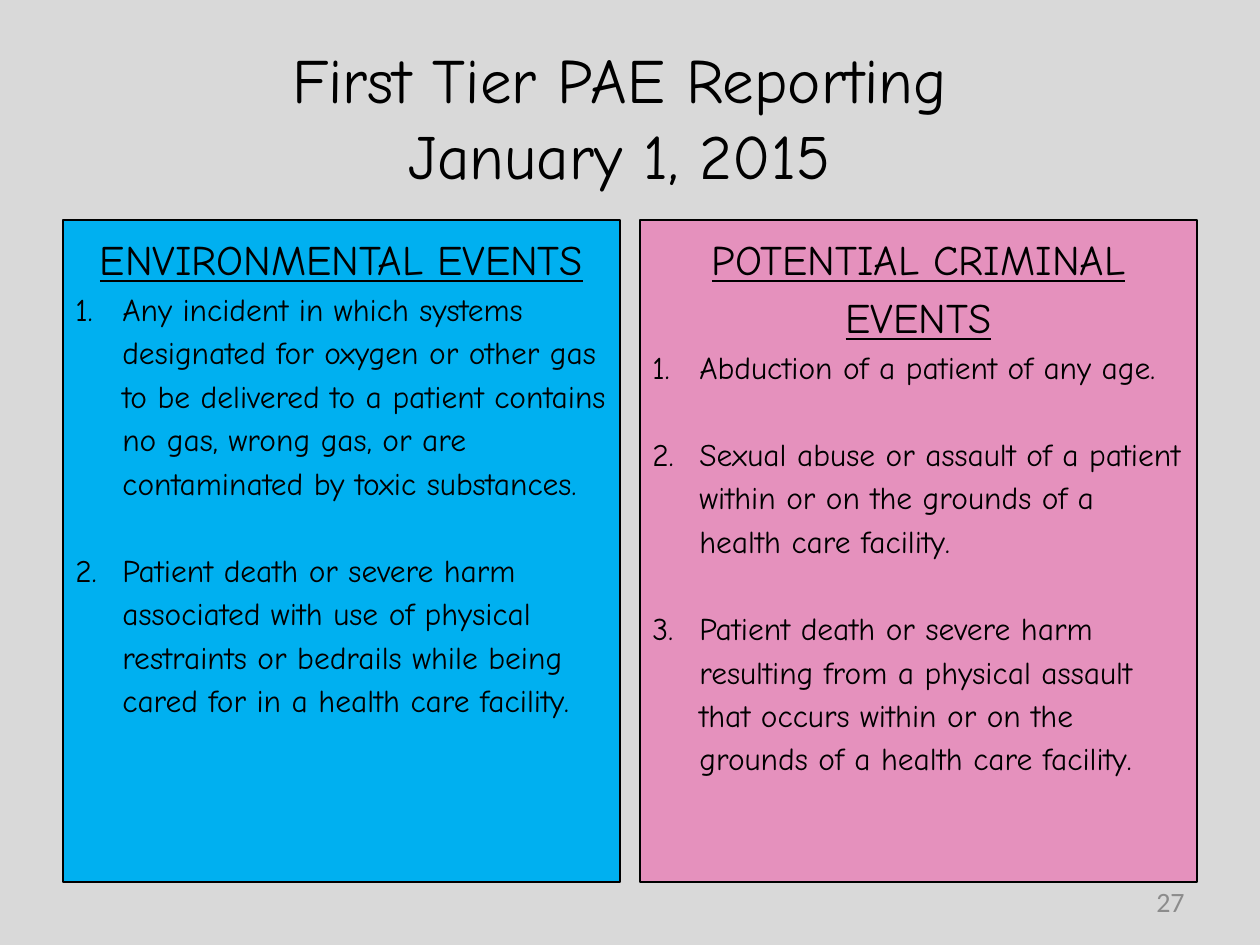
import pptx
import pptx.dml.color
import pptx.enum.shapes
import pptx.enum.text
import pptx.util
from lxml import etree
from pptx.oxml.ns import qn

EMU_PER_PX = 914400 / 126
ALIGN = pptx.enum.text.PP_ALIGN
ANCHOR = pptx.enum.text.MSO_ANCHOR


def px(length):
    return pptx.util.Emu(round(length * EMU_PER_PX))


def color(target, value):
    """Give a font, or a fill already made solid, the hex colour."""
    target.rgb = pptx.dml.color.RGBColor.from_string(value)


deck = pptx.Presentation()
deck.slide_width, deck.slide_height = px(1260), px(945)
page = deck.slides.add_slide(deck.slide_layouts[5])
page.background.fill.solid()
color(page.background.fill.fore_color, "D9D9D9")

# Title
title = page.shapes.title
title.left, title.top, title.width, title.height = px(63), px(38), px(1134), px(157)
title.text_frame.text = "First Tier PAE Reporting \vJanuary 1, 2015 "
title.text_frame.vertical_anchor = ANCHOR.MIDDLE
heading = title.text_frame.paragraphs[0]
heading.alignment = ALIGN.CENTER
for span in heading.runs:
    span.font.name = "Comic Neue"
    span.font.size = pptx.util.Pt(36)
    color(span.font.color, "000000")

# Two columns of numbered events
columns = [
    ("00B0F0", "ENVIRONMENTAL EVENTS", [
        "Any incident in which systems designated for oxygen or other gas to be "
        "delivered to a patient contains no gas, wrong gas, or are contaminated "
        "by toxic substances.",
        "Patient death or severe harm associated with use of physical restraints "
        "or bedrails while being cared for in a health care facility.",
    ]),
    ("E591BD", "POTENTIAL CRIMINAL EVENTS", [
        "Abduction of a patient of any age.",
        "Sexual abuse or assault of a patient within or on the grounds of a "
        "health care facility.",
        "Patient death or severe harm resulting from a physical assault that "
        "occurs within or on the grounds of a health care facility.",
    ]),
]
for column, (fill, caption, events) in enumerate(columns):
    box = page.shapes.add_shape(
        pptx.enum.shapes.MSO_SHAPE.RECTANGLE,
        px(63 + 577 * column), px(220), px(557), px(662))
    box.shadow.inherit = False
    box.fill.solid()
    color(box.fill.fore_color, fill)
    box.line.width = pptx.util.Pt(0.75)
    color(box.line.color, "000000")
    frame = box.text_frame
    frame.word_wrap = True
    frame.vertical_anchor = ANCHOR.TOP
    frame.text = "\n".join([caption] + events)
    for index, para in enumerate(frame.paragraphs):
        is_caption = index == 0
        para.alignment = ALIGN.CENTER if is_caption else ALIGN.LEFT
        para.line_spacing = 1.15
        para.space_before = pptx.util.Pt(25 if index > 1 else 0)
        span = para.runs[0]
        span.font.name = "Comic Neue"
        span.font.size = pptx.util.Pt(24 if is_caption else 18)
        span.font.underline = is_caption
        color(span.font.color, "000000")
        if not is_caption:
            properties = para._p.get_or_add_pPr()
            properties.set("marL", str(px(47)))
            properties.set("indent", str(px(-47)))
            font = etree.SubElement(properties, qn("a:buFont"))
            font.set("typeface", "+mj-lt")
            number = etree.SubElement(properties, qn("a:buAutoNum"))
            number.set("type", "arabicPeriod")

# Page number
page_number = page.shapes.add_textbox(px(903), px(876), px(294), px(50))
page_number.text_frame.word_wrap = True
page_number.text_frame.vertical_anchor = ANCHOR.MIDDLE
page_number.text_frame.text = "27"
para = page_number.text_frame.paragraphs[0]
para.alignment = ALIGN.RIGHT
span = para.runs[0]
span.font.name = "Calibri"
span.font.size = pptx.util.Pt(16)
color(span.font.color, "8C8C8C")

deck.save("out.pptx")
